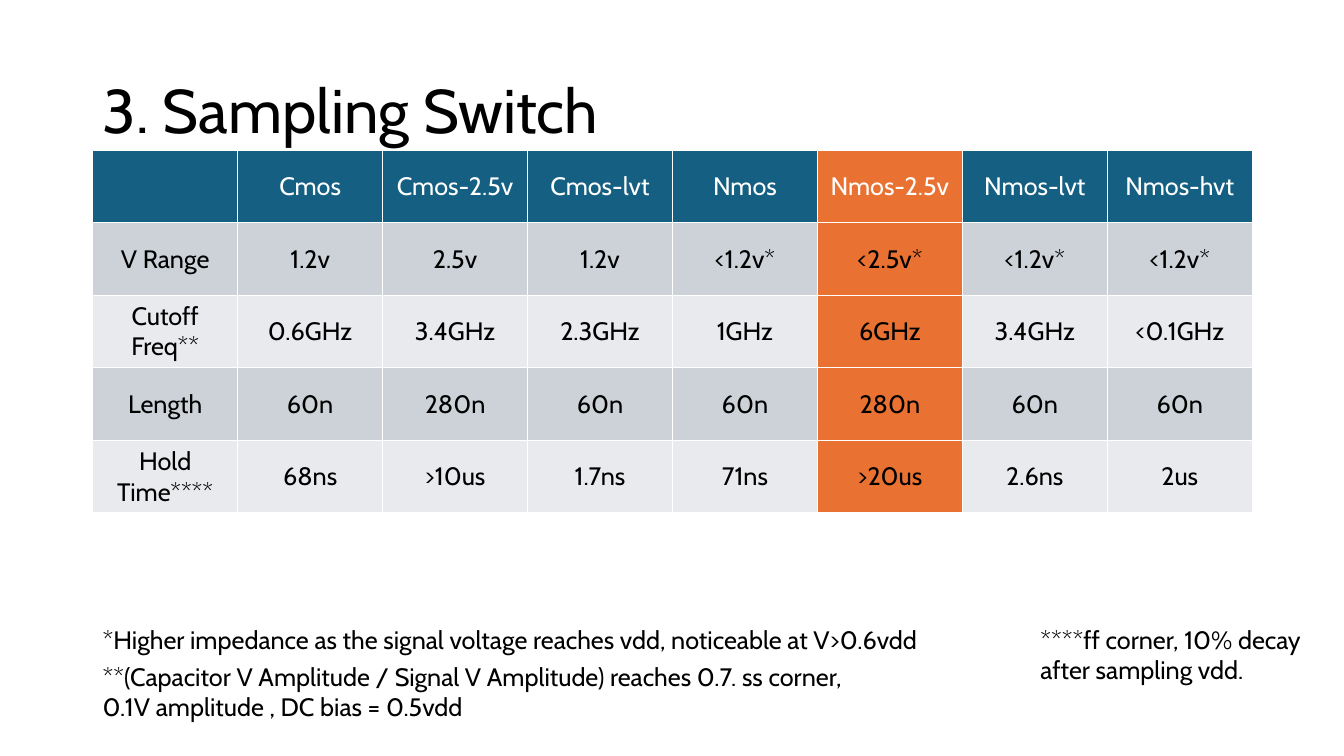
from dataclasses import dataclass

from pptx import Presentation
from pptx.dml.color import RGBColor
from pptx.enum.text import MSO_ANCHOR as Anchor, PP_ALIGN as Align
from pptx.util import Inches, Pt


@dataclass(frozen=True)
class Theme:
    font: str = "Cabin"
    title_size: int = 44
    body_size: int = 18
    text: str = "000000"
    header_text: str = "FFFFFF"
    header: str = "156082"
    highlight: str = "E97132"
    bands: tuple = ("CCD2D8", "E8EAED")


THEME = Theme()
SWITCHES = [
    ["", "Cmos", "Cmos-2.5v", "Cmos-lvt", "Nmos", "Nmos-2.5v", "Nmos-lvt", "Nmos-hvt"],
    ["V Range", "1.2v", "2.5v", "1.2v", "<1.2v*", "<2.5v*", "<1.2v*", "<1.2v*"],
    ["Cutoff Freq**", "0.6GHz", "3.4GHz", "2.3GHz", "1GHz", "6GHz", "3.4GHz", "<0.1GHz"],
    ["Length", "60n", "280n", "60n", "60n", "280n", "60n", "60n"],
    ["Hold Time****", "68ns", ">10us", "1.7ns", "71ns", ">20us", "2.6ns", "2us"],
]
CHOSEN_SWITCH = "Nmos-2.5v"
FOOTNOTES = [
    ("*Higher impedance as the signal voltage reaches vdd, noticeable at V>0.6vdd",
     (0.92, 6.14, 9.4, 0.4)),
    ("**(Capacitor V Amplitude / Signal V Amplitude) reaches 0.7. ss corner, "
     "0.1V amplitude , DC bias = 0.5vdd", (0.92, 6.51, 7.69, 0.71)),
    ("****ff corner, 10% decay after sampling vdd.", (10.22, 6.14, 3.11, 0.71)),
]


def style_font(paragraph, size, color):
    font = paragraph.font
    font.name = THEME.font
    font.size = Pt(size)
    font.bold = False
    font.color.rgb = RGBColor.from_string(color)


def add_text(slide, text, box, size, anchor=Anchor.TOP, line_spacing=None):
    frame = slide.shapes.add_textbox(*map(Inches, box)).text_frame
    frame.word_wrap = True
    frame.vertical_anchor = anchor
    paragraph = frame.paragraphs[0]
    paragraph.text = text
    paragraph.line_spacing = line_spacing
    style_font(paragraph, size, THEME.text)


def cell_fill(row, column):
    if SWITCHES[0][column] == CHOSEN_SWITCH:
        return THEME.highlight
    return THEME.header if row == 0 else THEME.bands[(row - 1) % 2]


def add_switch_table(slide, box):
    """Fill the box with equal cells; the table style draws the white rules."""
    size = len(SWITCHES), len(SWITCHES[0])
    table = slide.shapes.add_table(*size, *map(Inches, box)).table
    for row, values in enumerate(SWITCHES):
        for column, value in enumerate(values):
            cell = table.cell(row, column)
            cell.fill.solid()
            cell.fill.fore_color.rgb = RGBColor.from_string(cell_fill(row, column))
            cell.vertical_anchor = Anchor.MIDDLE
            paragraph = cell.text_frame.paragraphs[0]
            paragraph.text = value
            paragraph.alignment = Align.CENTER
            style_font(paragraph, THEME.body_size,
                       THEME.header_text if row == 0 else THEME.text)


def main():
    presentation = Presentation()
    presentation.slide_width = Inches(13.33)
    presentation.slide_height = Inches(7.5)
    slide = presentation.slides.add_slide(presentation.slide_layouts[6])
    add_text(slide, "3. Sampling Switch", (0.92, 0.4, 11.5, 1.45),
             THEME.title_size, Anchor.MIDDLE, 0.9)
    add_switch_table(slide, (0.92, 1.49, 11.5, 3.6))
    for text, box in FOOTNOTES:
        add_text(slide, text, box, THEME.body_size)
    presentation.save("out.pptx")


if __name__ == "__main__":
    main()
